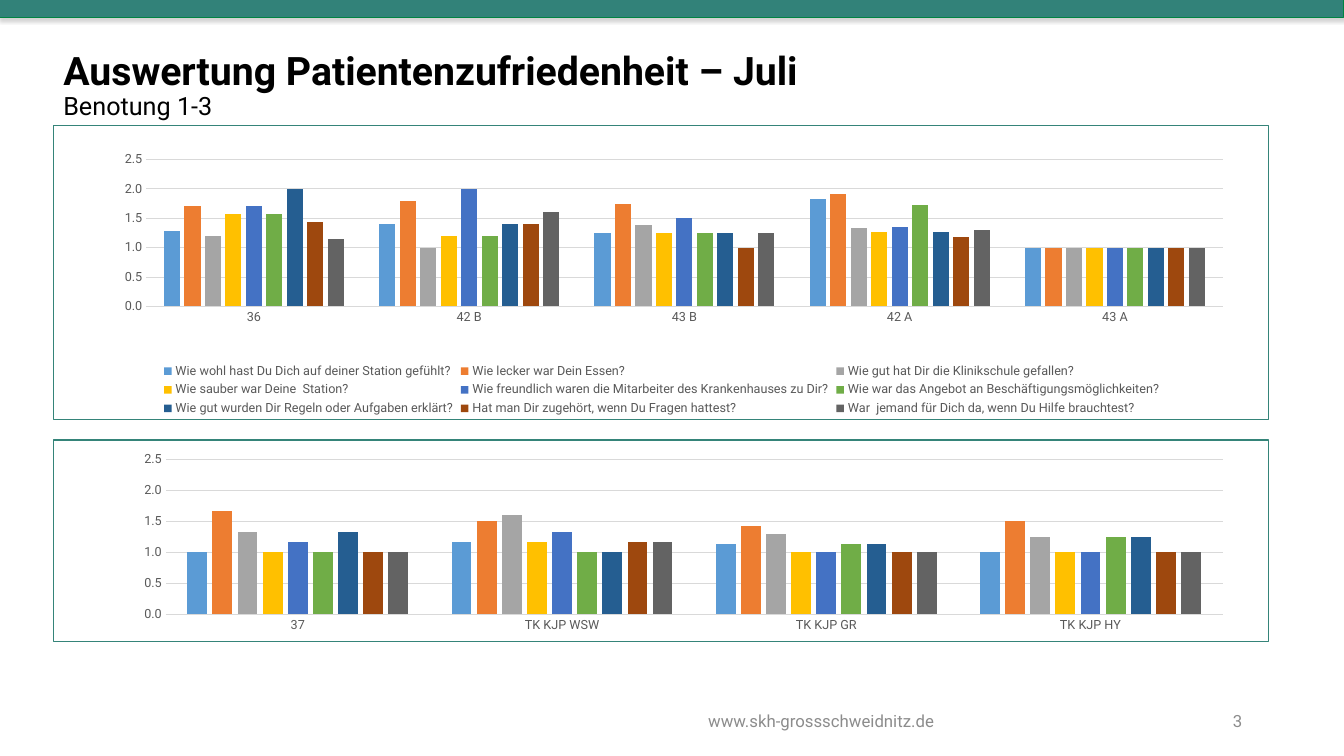
from lxml.etree import SubElement
from pptx import Presentation
from pptx.chart.data import CategoryChartData
from pptx.dml.color import RGBColor
from pptx.enum.chart import XL_CHART_TYPE, XL_LEGEND_POSITION, XL_TICK_MARK
from pptx.enum.shapes import MSO_SHAPE
from pptx.enum.text import MSO_ANCHOR, PP_ALIGN
from pptx.oxml import parse_xml
from pptx.oxml.ns import nsdecls, qn
from pptx.util import Inches, Pt

FONT = "Roboto"
BLACK = RGBColor(0x00, 0x00, 0x00)
GREEN = RGBColor(0x32, 0x82, 0x79)
GREEN_LINE = RGBColor(0x00, 0x84, 0x42)
BORDER = RGBColor(0x35, 0x84, 0x79)
GRID = RGBColor(0xD9, 0xD9, 0xD9)
CHART_TEXT = RGBColor(0x59, 0x59, 0x59)
FOOTER_TEXT = RGBColor(0x8C, 0x8C, 0x8C)
SHADOW = RGBColor(0x80, 0x80, 0x80)

QUESTIONS = [
    ("Wie wohl hast Du Dich auf deiner Station gefühlt?", RGBColor(0x5B, 0x9B, 0xD5)),
    ("Wie lecker war Dein Essen?", RGBColor(0xED, 0x7D, 0x31)),
    ("Wie gut hat Dir die Klinikschule gefallen?", RGBColor(0xA5, 0xA5, 0xA5)),
    ("Wie sauber war Deine  Station?", RGBColor(0xFF, 0xC0, 0x00)),
    ("Wie freundlich waren die Mitarbeiter des Krankenhauses zu Dir?", RGBColor(0x44, 0x72, 0xC4)),
    ("Wie war das Angebot an Beschäftigungsmöglichkeiten?", RGBColor(0x70, 0xAD, 0x47)),
    ("Wie gut wurden Dir Regeln oder Aufgaben erklärt?", RGBColor(0x25, 0x5E, 0x91)),
    ("Hat man Dir zugehört, wenn Du Fragen hattest?", RGBColor(0x9E, 0x48, 0x0E)),
    ("War  jemand für Dich da, wenn Du Hilfe brauchtest?", RGBColor(0x63, 0x63, 0x63)),
]

STATIONS = {
    "36": [1.29, 1.71, 1.2, 1.57, 1.71, 1.57, 2, 1.43, 1.14],
    "42 B": [1.4, 1.8, 1, 1.2, 2, 1.2, 1.4, 1.4, 1.6],
    "43 B": [1.25, 1.75, 1.38, 1.25, 1.5, 1.25, 1.25, 1, 1.25],
    "42 A": [1.82, 1.91, 1.33, 1.27, 1.36, 1.73, 1.27, 1.18, 1.3],
    "43 A": [1] * 9,
}
DAY_CLINICS = {
    "37": [1, 1.67, 1.33, 1, 1.17, 1, 1.33, 1, 1],
    "TK KJP WSW": [1.17, 1.5, 1.6, 1.17, 1.33, 1, 1, 1.17, 1.17],
    "TK KJP GR": [1.14, 1.43, 1.29, 1, 1, 1.14, 1.14, 1, 1],
    "TK KJP HY": [1, 1.5, 1.25, 1, 1, 1.25, 1.25, 1, 1],
}


def set_format(target, values):
    for name, value in values.items():
        setattr(target, name, value)


def set_font(font, size, color, bold=False):
    set_format(font, {"name": FONT, "size": Pt(size), "bold": bold})
    font.color.rgb = color


def add_band(slide, box):
    sp = slide.shapes.add_shape(MSO_SHAPE.RECTANGLE, *map(Inches, box))
    sp.fill.solid()
    sp.fill.fore_color.rgb = GREEN
    sp.line.color.rgb = GREEN_LINE
    sp.line.width = Pt(0.75)
    sp.shadow.inherit = False
    effects = sp._element.spPr.find(qn("a:effectLst"))
    shadow = SubElement(effects, qn("a:outerShdw"), blurRad=str(Pt(3.1)),
                        dist=str(Pt(1.8)), dir="5400000", rotWithShape="0")
    color = SubElement(shadow, qn("a:srgbClr"), val=str(SHADOW))
    SubElement(color, qn("a:alpha"), val="35000")


def add_text(slide, box, lines, align=PP_ALIGN.LEFT, spacing=1.0):
    tf = slide.shapes.add_textbox(*map(Inches, box)).text_frame
    set_format(tf, {"word_wrap": True, "vertical_anchor": MSO_ANCHOR.MIDDLE})
    p = tf.paragraphs[0]
    set_format(p, {"alignment": align, "line_spacing": spacing})
    for i, (text, size, color, bold) in enumerate(lines):
        if i:
            p.add_line_break()
        r = p.add_run()
        r.text = text
        set_font(r.font, size, color, bold)


def style_frame(chart, plot_box):
    space = chart._chartSpace
    x, y, w, h = plot_box
    layout = parse_xml(
        f'<c:layout {nsdecls("c")}><c:manualLayout><c:layoutTarget val="inner"/>'
        f'<c:xMode val="edge"/><c:yMode val="edge"/><c:x val="{x}"/><c:y val="{y}"/>'
        f'<c:w val="{w}"/><c:h val="{h}"/></c:manualLayout></c:layout>')
    area = space.chart.plotArea
    for old in area.findall(qn("c:layout")):
        area.remove(old)
    area.insert(0, layout)
    space.chart.addnext(parse_xml(
        f'<c:spPr {nsdecls("c", "a")}><a:noFill/><a:ln w="{Pt(0.75)}"><a:solidFill>'
        f'<a:srgbClr val="{BORDER}"/></a:solidFill></a:ln></c:spPr>'))


def style_axes(chart):
    cat, val = chart.category_axis, chart.value_axis
    for axis in (cat, val):
        set_format(axis, {"major_tick_mark": XL_TICK_MARK.NONE,
                          "minor_tick_mark": XL_TICK_MARK.NONE})
        set_font(axis.tick_labels.font, 9, CHART_TEXT)
    set_format(val, {"minimum_scale": 0, "maximum_scale": 2.5,
                     "major_unit": 0.5, "has_major_gridlines": True})
    set_format(val.tick_labels, {"number_format": "0.0", "number_format_is_linked": False})
    val.format.line.fill.background()
    for line in (cat.format.line, val.major_gridlines.format.line):
        line.color.rgb = GRID
        line.width = Pt(0.75)


def add_ratings_chart(slide, box, ratings, plot_box, legend=False):
    data = CategoryChartData()
    data.categories = list(ratings)
    for (question, _), values in zip(QUESTIONS, zip(*ratings.values())):
        data.add_series(question, values)
    chart = slide.shapes.add_chart(
        XL_CHART_TYPE.COLUMN_CLUSTERED, *map(Inches, box), data).chart
    set_font(chart.font, 10, BLACK)
    set_format(chart, {"has_title": False, "has_legend": legend})
    if legend:
        set_format(chart.legend, {"position": XL_LEGEND_POSITION.BOTTOM,
                                  "include_in_layout": False})
        set_font(chart.legend.font, 9, CHART_TEXT)
    plot = chart.plots[0]
    set_format(plot, {"gap_width": 219, "overlap": -27, "vary_by_categories": False})
    for series, (_, color) in zip(plot.series, QUESTIONS):
        series.format.fill.solid()
        series.format.fill.fore_color.rgb = color
    style_axes(chart)
    style_frame(chart, plot_box)


def add_footer(slide, box):
    x, y, w, h = box
    number_w = 0.66
    add_text(slide, (x, y, 6.65, h), [("www.skh-grossschweidnitz.de", 12, FOOTER_TEXT, False)],
             PP_ALIGN.CENTER)
    add_text(slide, (x + w - number_w, y, number_w, h), [("3", 12, FOOTER_TEXT, False)],
             PP_ALIGN.RIGHT)


def main():
    prs = Presentation()
    set_format(prs, {"slide_width": Inches(13.33), "slide_height": Inches(7.5)})
    s = prs.slides.add_slide(prs.slide_layouts[6])
    add_band(s, (0, 0, 13.33, 0.17))
    add_text(s, (0.53, 0.13, 11.5, 1.45),
             [("Auswertung Patientenzufriedenheit – Juli", 28, BLACK, True),
              ("Benotung 1-3", 18, BLACK, False)], spacing=0.9)
    add_ratings_chart(s, (0.53, 1.24, 12.06, 2.93), STATIONS,
                      (0.076, 0.116, 0.886, 0.499), legend=True)
    add_ratings_chart(s, (0.53, 4.36, 12.06, 2.01), DAY_CLINICS,
                      (0.092, 0.098, 0.87, 0.766))
    add_footer(s, (4.82, 6.95, 7.6, 0.4))
    prs.save("out.pptx")


if __name__ == "__main__":
    main()
